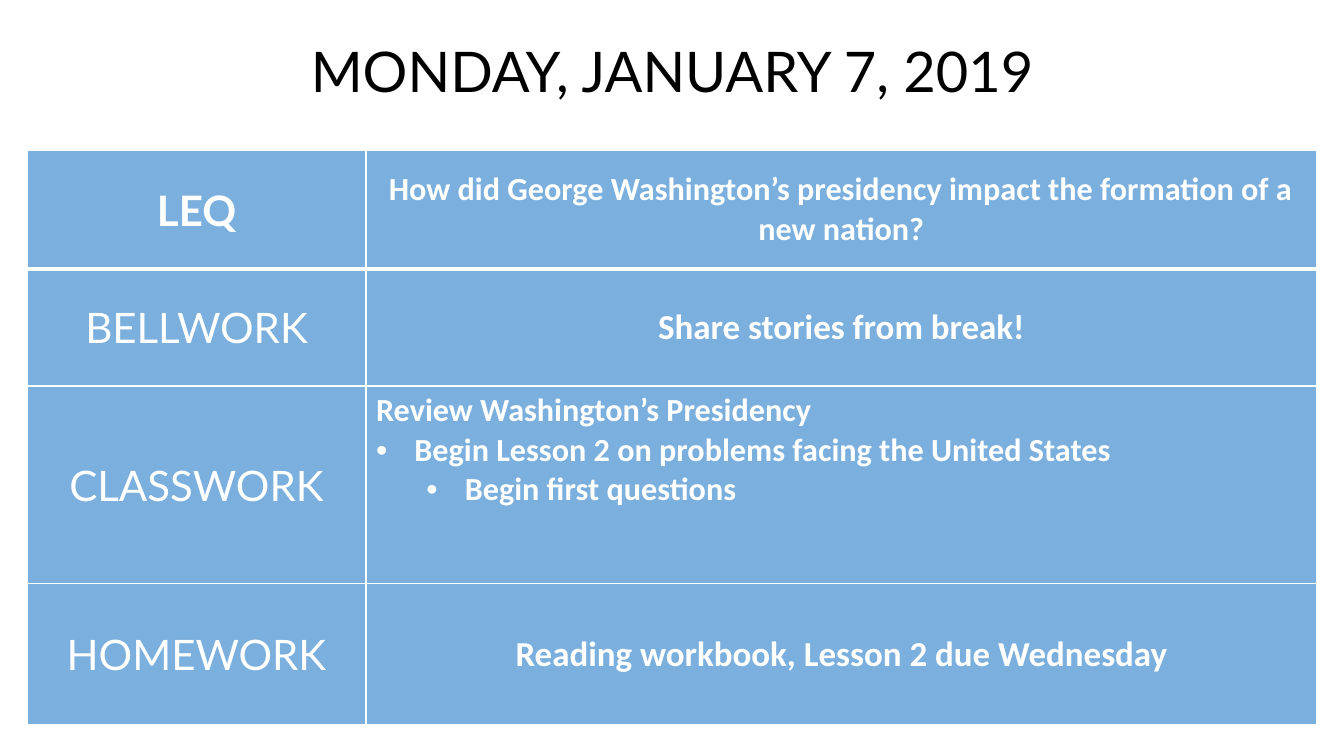
from dataclasses import dataclass

import pptx
import pptx.dml.color
import pptx.enum.text
import pptx.oxml
import pptx.oxml.ns
import pptx.util

Inches = pptx.util.Inches
Pt = pptx.util.Pt
ALIGN = pptx.enum.text.PP_ALIGN
ANCHOR = pptx.enum.text.MSO_ANCHOR
qn = pptx.oxml.ns.qn
NS = pptx.oxml.ns.nsdecls("a")


@dataclass(frozen=True)
class Theme:
    white: str = "FFFFFF"
    black: str = "000000"
    blue: str = "5B9BD5"
    heading_font: str = "Lato"
    body_font: str = "Calibri"
    title_size: int = 40
    label_size: int = 30
    entry_size: int = 25
    detail_size: int = 23


THEME = Theme()
LABEL_WIDTH = 3.36
AGENDA = [
    ("LEQ", 1.18, THEME.detail_size,
     ["How did George Washington’s presidency impact the formation of a new nation?"]),
    ("BELLWORK", 1.16, THEME.entry_size, ["Share stories from break!"]),
    ("CLASSWORK", 1.96, THEME.detail_size,
     ["Review Washington’s Presidency",
      "Begin Lesson 2 on problems facing the United States",
      "Begin first questions"]),
    ("HOMEWORK", 1.4, THEME.entry_size, ["Reading workbook, Lesson 2 due Wednesday"]),
]


def write_text(p, text, *, size, font, color=THEME.white, bold=False, align=ALIGN.CENTER):
    p.alignment = align
    r = p.add_run()
    r.text = text
    r.font.size = Pt(size)
    r.font.name = font
    r.font.bold = bold
    r.font.color.rgb = pptx.dml.color.RGBColor.from_string(color)


def fill_solid(fill, parent, color, opacity):
    fill.solid()
    fill.fore_color.rgb = pptx.dml.color.RGBColor.from_string(color)
    parent.find(qn("a:solidFill")).find(qn("a:srgbClr")).append(
        pptx.oxml.parse_xml(f'<a:alpha {NS} val="{opacity * 1000}"/>'))


def set_borders(cell, top, bottom):
    tcPr = cell._tc.get_or_add_tcPr()
    for i, (side, width) in enumerate(zip("LRTB", (1, 1, top, bottom))):
        tcPr.insert(i, pptx.oxml.parse_xml(
            f'<a:ln{side} {NS} w="{Pt(width)}"><a:solidFill>'
            f'<a:srgbClr val="{THEME.white}"/></a:solidFill></a:ln{side}>'))


def set_bullet(p, level):
    p.level = level - 1
    pPr = p._p.get_or_add_pPr()
    pPr.set("marL", str(Inches(0.38 + 0.5 * (level - 1))))
    pPr.set("indent", str(Inches(-0.38)))
    pPr.append(pptx.oxml.parse_xml(f'<a:buFont {NS} typeface="Arial"/>'))
    pPr.append(pptx.oxml.parse_xml(f'<a:buChar {NS} char="•"/>'))


def add_title(slide, text, left, top, width, height):
    sp = slide.shapes.title
    sp.left, sp.top, sp.width, sp.height = map(Inches, (left, top, width, height))
    fill_solid(sp.fill, sp._element.spPr, THEME.white, 65)
    tf = sp.text_frame
    tf.auto_size = pptx.enum.text.MSO_AUTO_SIZE.NONE
    tf.vertical_anchor = ANCHOR.MIDDLE
    write_text(tf.paragraphs[0], text, size=THEME.title_size,
               font=THEME.heading_font, color=THEME.black)


def add_agenda(slide, left, top, width, height):
    table = slide.shapes.add_table(
        len(AGENDA), 2, *map(Inches, (left, top, width, height))).table
    table.horz_banding = False
    table.columns[0].width = Inches(LABEL_WIDTH)
    table.columns[1].width = Inches(width - LABEL_WIDTH)
    for i, (label, row_height, size, lines) in enumerate(AGENDA):
        table.rows[i].height = Inches(row_height)
        label_cell, entry_cell = table.cell(i, 0), table.cell(i, 1)
        for cell in (label_cell, entry_cell):
            cell.vertical_anchor = ANCHOR.MIDDLE
            fill_solid(cell.fill, cell._tc.get_or_add_tcPr(), THEME.blue, 80)
            set_borders(cell, 3 if i == 1 else 1, 3 if i == 0 else 1)
        write_text(label_cell.text_frame.paragraphs[0], label, size=THEME.label_size,
                   font=THEME.heading_font, bold=i == 0)
        is_list = len(lines) > 1
        if is_list:
            entry_cell.vertical_anchor = ANCHOR.TOP
        tf = entry_cell.text_frame
        for level, line in enumerate(lines):
            p = tf.add_paragraph() if level else tf.paragraphs[0]
            write_text(p, line, size=size, font=THEME.body_font, bold=True,
                       align=ALIGN.LEFT if is_list else ALIGN.CENTER)
            if level:
                set_bullet(p, level)


def main():
    prs = pptx.Presentation()
    prs.slide_width, prs.slide_height = Inches(13.33), Inches(7.5)
    slide = prs.slides.add_slide(prs.slide_layouts[5])
    add_agenda(slide, 0.27, 1.49, 12.79, 5.7)
    add_title(slide, "MONDAY, JANUARY 7, 2019", 0.27, 0.2, 12.79, 1)
    prs.save("out.pptx")


if __name__ == "__main__":
    main()
